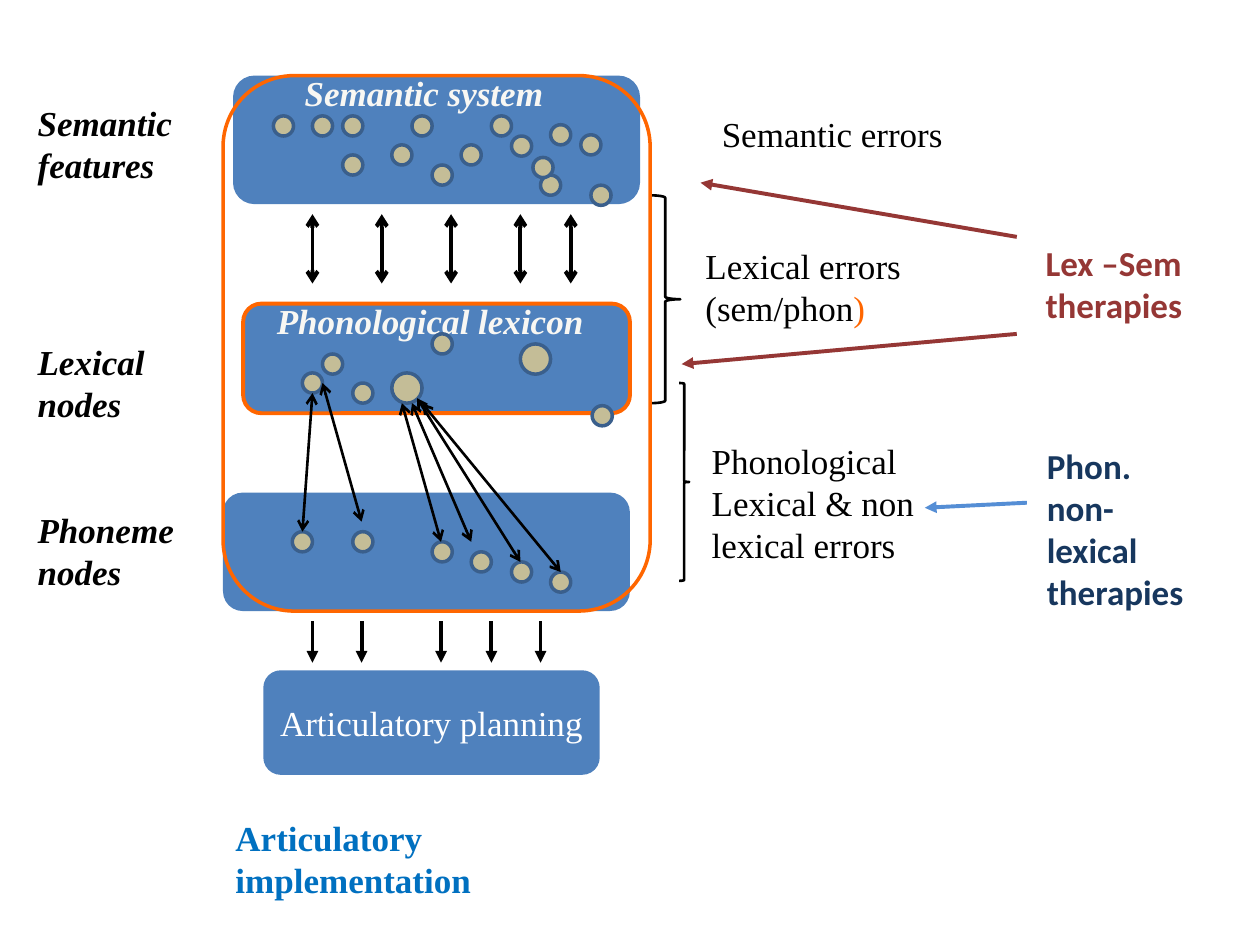
from lxml import etree
from pptx import Presentation
from pptx.dml.color import RGBColor
from pptx.enum import shapes, text
from pptx.oxml import ns
from pptx.util import Inches, Pt

COLORS = {
    "box": "4F81BD", "orange": "FF6600", "node": "C4BD97", "node_edge": "3A5F8C",
    "black": "000000", "white": "FFFFFF", "heading": "F8F7F3", "implementation": "0070C0",
    "lex_sem": "953735", "phon": "17375E", "phon_arrow": "558ED5",
}
SERIF, SANS = "Times New Roman", "Calibri"
NODE = 0.16
BIG_NODE = 0.24

SEMANTIC_NODES = [
    (2.17, 0.92), (2.48, 0.92), (2.72, 0.92), (3.27, 0.92), (3.9, 0.92),
    (2.72, 1.23), (3.11, 1.15), (3.43, 1.31), (3.66, 1.15), (4.06, 1.08),
    (4.37, 0.99), (4.61, 1.07), (4.29, 1.39), (4.23, 1.25), (4.69, 1.47),
]
LEXICAL_NODES = [(2.4, 2.96), (2.56, 2.81), (2.8, 3.04), (3.43, 2.65), (4.7, 3.22)]
BIG_LEXICAL_NODES = [(3.11, 2.96), (4.13, 2.73)]
PHONEME_NODES = [(2.32, 4.22), (2.8, 4.22), (3.43, 4.3), (3.74, 4.38), (4.06, 4.46), (4.37, 4.54)]

# Lexical node end, phoneme node end
LEXICAL_LINKS = [
    ((2.48, 3.12), (2.4, 4.22)), ((2.56, 3.04), (2.87, 4.14)),
    ((3.19, 3.2), (3.5, 4.3)), ((3.27, 3.2), (3.74, 4.3)),
    ((3.31, 3.16), (4.13, 4.46)), ((3.35, 3.2), (4.45, 4.54)),
]
SEMANTIC_LINK_XS = [2.48, 3.03, 3.58, 4.13, 4.53]
OUTPUT_ARROW_XS = [2.48, 2.87, 3.5, 3.9, 4.29]


def rgb(name):
    return RGBColor.from_string(COLORS[name])


def add_outline(slide, preset, at, fill=None, line=None, width=2.0):
    shape = slide.shapes.add_shape(preset, *map(Inches, at))
    shape.shadow.inherit = False
    if fill:
        shape.fill.solid()
        shape.fill.fore_color.rgb = rgb(fill)
    else:
        shape.fill.background()
    if line:
        shape.line.color.rgb = rgb(line)
        shape.line.width = Pt(width)
    else:
        shape.line.fill.background()
    return shape


def add_box(slide, at, **style):
    return add_outline(slide, shapes.MSO_SHAPE.ROUNDED_RECTANGLE, at, **style)


def add_nodes(slide, positions, size=NODE):
    for left, top in positions:
        add_outline(slide, shapes.MSO_SHAPE.OVAL, (left, top, size, size),
                    fill="node", line="node_edge")


def add_run(paragraph, wording, color, font=SERIF, bold=None, italic=None):
    run = paragraph.add_run()
    run.text = wording
    run.font.name = font
    run.font.size = Pt(20)
    run.font.bold = bold
    run.font.italic = italic
    run.font.color.rgb = rgb(color)


def add_label(slide, at, lines, color="black", align=text.PP_ALIGN.LEFT, **style):
    """Add a text box with one paragraph per line of wording."""
    frame = slide.shapes.add_textbox(*map(Inches, at)).text_frame
    frame.word_wrap = True
    for index, wording in enumerate(lines):
        paragraph = frame.add_paragraph() if index else frame.paragraphs[0]
        paragraph.alignment = align
        add_run(paragraph, wording, color, **style)
    return frame


def add_arrow(slide, start, end, color="black", width=2.25, head=None, tail="triangle"):
    arrow = slide.shapes.add_connector(
        shapes.MSO_CONNECTOR.STRAIGHT, *map(Inches, (*start, *end)))
    arrow.line.color.rgb = rgb(color)
    arrow.line.width = Pt(width)
    line = arrow.line._get_or_add_ln()
    for tag, kind in (("a:headEnd", head), ("a:tailEnd", tail)):
        if kind:
            etree.SubElement(line, ns.qn(tag), type=kind)
    etree.SubElement(arrow._element.spPr, ns.qn("a:effectLst"))


def add_levels(slide):
    # Processing levels
    add_box(slide, (1.77, 3.91, 3.23, 0.94), fill="box")
    add_box(slide, (1.85, 0.6, 3.23, 1.02), fill="box")
    add_box(slide, (1.93, 2.41, 3.07, 0.87), fill="box", line="orange", width=2.25)
    planning = add_box(slide, (2.09, 5.32, 2.67, 0.83), fill="box").text_frame
    planning.word_wrap = False
    planning.vertical_anchor = text.MSO_ANCHOR.MIDDLE
    planning.paragraphs[0].alignment = text.PP_ALIGN.CENTER
    add_run(planning.paragraphs[0], "Articulatory planning", "white")

    # Level headings
    add_label(slide, (2.32, 0.52, 2.36, 0.44), ["Semantic system"], "heading",
              bold=True, italic=True)
    add_label(slide, (1.38, 2.33, 4.07, 0.44), ["Phonological lexicon"], "heading",
              text.PP_ALIGN.CENTER, bold=True, italic=True)
    add_label(slide, (1.77, 6.43, 3.61, 0.77), ["Articulatory", "implementation"],
              "implementation", bold=True)

    # Names of the units on the left
    for top, lines in ((0.76, ["Semantic features"]), (2.65, ["Lexical nodes"]),
                       (3.99, ["Phoneme", "nodes"])):
        add_label(slide, (0.2, top, 1.42, 0.77), lines, bold=True, italic=True)


def add_network(slide):
    add_nodes(slide, SEMANTIC_NODES + LEXICAL_NODES + PHONEME_NODES)
    add_nodes(slide, BIG_LEXICAL_NODES, BIG_NODE)
    for start, end in LEXICAL_LINKS:
        add_arrow(slide, start, end, width=1.5, head="arrow", tail="arrow")
    for x in SEMANTIC_LINK_XS:
        add_arrow(slide, (x, 1.7), (x, 2.25), head="arrow", tail="arrow")
    for x in OUTPUT_ARROW_XS:
        add_arrow(slide, (x, 4.93), (x, 5.26))


def add_errors(slide):
    add_label(slide, (5.63, 0.84, 2.28, 0.44), ["Semantic errors"])
    lexical = add_label(slide, (5.5, 1.89, 2.05, 0.77), ["Lexical errors (sem/phon"])
    add_run(lexical.paragraphs[0], ")", "orange")
    add_label(slide, (5.55, 3.44, 2.0, 1.11),
              ["Phonological", "Lexical & non lexical errors"])
    for at in ((5.16, 1.55, 0.24, 1.65), (5.39, 3.04, 0.08, 1.57)):
        add_outline(slide, shapes.MSO_SHAPE.RIGHT_BRACE, at, line="black", width=1.5)
    # Frame around the whole lexical network
    add_box(slide, (1.77, 0.6, 3.39, 4.25), line="orange")


def add_therapies(slide):
    add_arrow(slide, (8.07, 1.88), (5.56, 1.45), "lex_sem")
    add_arrow(slide, (8.07, 2.65), (5.41, 2.89), "lex_sem")
    add_label(slide, (8.2, 1.87, 1.3, 0.77), ["Lex –Sem therapies"], "lex_sem",
              font=SANS, bold=True)
    add_arrow(slide, (8.15, 3.99), (7.34, 4.03), "phon_arrow")
    add_label(slide, (8.21, 3.48, 1.43, 1.45), ["Phon. non-lexical", "therapies"], "phon",
              font=SANS, bold=True)


def main():
    deck = Presentation()
    deck.slide_width, deck.slide_height = Inches(10), Inches(7.5)
    slide = deck.slides.add_slide(deck.slide_layouts[6])
    add_levels(slide)
    add_network(slide)
    add_errors(slide)
    add_therapies(slide)
    deck.save("out.pptx")


if __name__ == "__main__":
    main()
